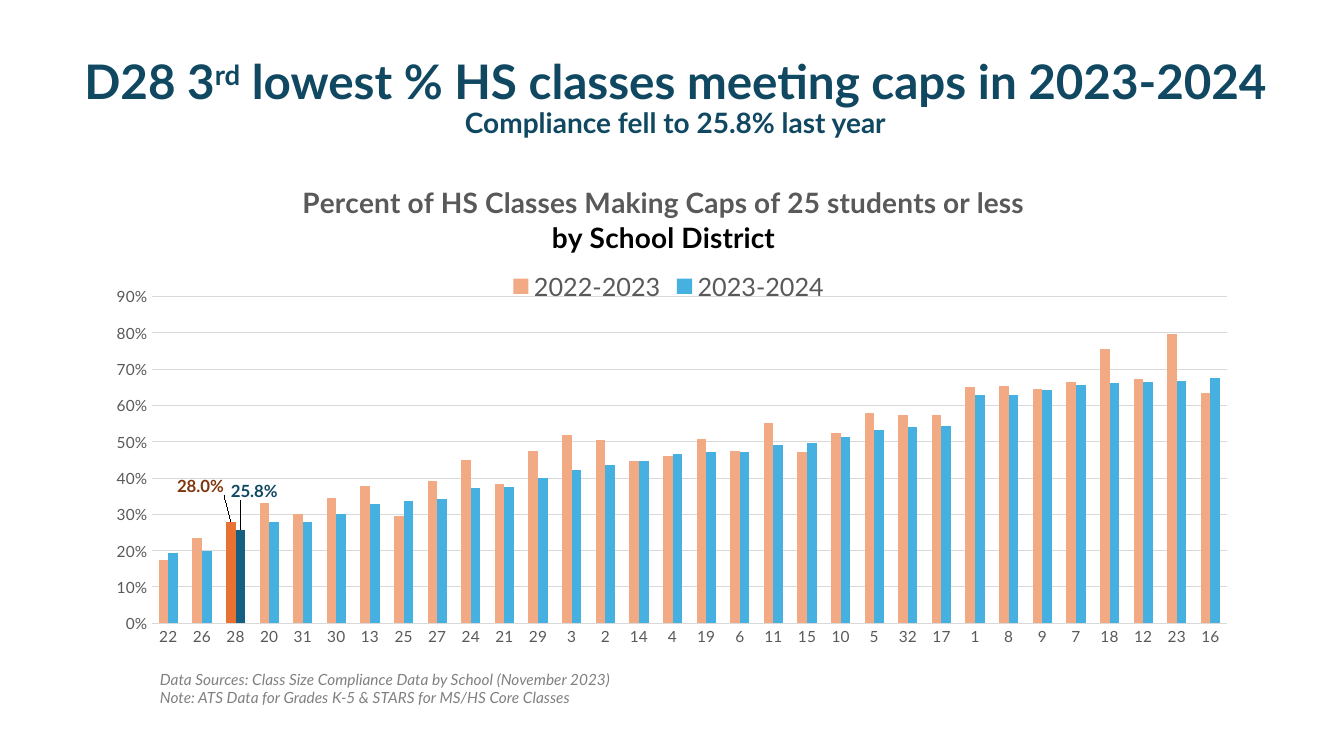
"""Build the slide on high school class size compliance by district."""
from dataclasses import dataclass

from lxml import etree
from pptx import Presentation
from pptx import util as u
from pptx.chart import data as chart_data
from pptx.dml import color
from pptx.enum import chart as ec, text
from pptx.oxml import ns


@dataclass(frozen=True)
class Theme:
    face: str = "Lato"
    navy: str = "104862"
    rust: str = "80350E"
    grey: str = "595959"
    black: str = "000000"
    note: str = "808080"
    rule: str = "D9D9D9"
    headline: int = 34
    heading: int = 20
    legend: int = 18
    label: int = 12
    small: int = 11


THEME = Theme()
DISTRICTS = ("22 26 28 20 31 30 13 25 27 24 21 29 3 2 14 4 19 6 11 15 10 5 32 17 "
             "1 8 9 7 18 12 23 16").split()
HIGHLIGHT = DISTRICTS.index("28")
YEARS = [
    dict(name="2022-2023", fill="F2AA84", accent="E97132", label=THEME.rust, shift=(-0.026, -0.04),
         rates=[0.174, 0.236, 0.280, 0.330, 0.300, 0.345, 0.378, 0.296,
                0.393, 0.450, 0.385, 0.474, 0.519, 0.505, 0.446, 0.461,
                0.508, 0.474, 0.553, 0.472, 0.525, 0.579, 0.574, 0.573,
                0.652, 0.653, 0.645, 0.664, 0.755, 0.672, 0.796, 0.634]),
    dict(name="2023-2024", fill="46B1E1", accent="156082", label=THEME.navy, shift=(0.012, -0.045),
         rates=[0.194, 0.198, 0.258, 0.278, 0.280, 0.300, 0.329, 0.336,
                0.343, 0.372, 0.376, 0.400, 0.423, 0.435, 0.448, 0.467,
                0.471, 0.473, 0.491, 0.498, 0.513, 0.532, 0.542, 0.543,
                0.628, 0.630, 0.642, 0.657, 0.661, 0.664, 0.668, 0.676]),
]


def assign(target, **values):
    """Set each given value as an attribute of the target."""
    for name, value in values.items():
        setattr(target, name, value)


def style(font, size, tint, **values):
    """Give a font the theme face, a size and a colour."""
    assign(font, name=THEME.face, size=u.Pt(size), **values)
    font.color.rgb = color.RGBColor.from_string(tint)


def paint(fill, tint):
    """Make a fill solid in one colour."""
    fill.solid()
    fill.fore_color.rgb = color.RGBColor.from_string(tint)


def layout(x, y, width=None, height=None):
    """Return a manual chart layout, in fractions of the chart."""
    root = etree.Element(ns.qn("c:layout"))
    manual = etree.SubElement(root, ns.qn("c:manualLayout"))
    edges = {"xMode": "edge", "yMode": "edge"}
    parts = {"x": x, "y": y}
    if width:
        parts = {"layoutTarget": "inner", **edges, **parts, "w": width, "h": height}
    elif x > 0.1:
        parts = {**edges, **parts}
    for name, value in parts.items():
        etree.SubElement(manual, ns.qn("c:" + name)).set("val", str(value))
    return root


def place(parent, new, before):
    """Put a layout before the first of the named children, replacing any old one."""
    for old in parent.findall(ns.qn("c:layout")):
        parent.remove(old)
    for name in before:
        follower = parent.find(ns.qn("c:" + name))
        if follower is not None:
            follower.addprevious(new)
            return
    parent.append(new)


def add_lines(frame, lines, **paragraph_format):
    """Write paragraphs, each a list of (words, size, tint, font values, baseline)."""
    for index, runs in enumerate(lines):
        line = frame.add_paragraph() if index else frame.paragraphs[0]
        assign(line, **paragraph_format)
        for words, size, tint, values, baseline in runs:
            run = line.add_run()
            run.text = words
            style(run.font, size, tint, **values)
            if baseline:
                run.font._element.set("baseline", str(baseline))


def add_text(slide, box, lines, anchor, **paragraph_format):
    """Add a wrapped text box."""
    frame = slide.shapes.add_textbox(*map(u.Cm, box)).text_frame
    assign(frame, word_wrap=True, vertical_anchor=anchor)
    add_lines(frame, lines, **paragraph_format)


def label_highlight(series, year):
    """Colour the highlighted column and label it with a leader line."""
    point = series.points[HIGHLIGHT]
    paint(point.format.fill, year["accent"])
    label = point.data_label
    style(label.font, THEME.label, year["label"], bold=True)
    label.position = ec.XL_LABEL_POSITION.OUTSIDE_END
    series.data_labels.show_value = False
    group = series.data_labels._element
    item = group.find(ns.qn("c:dLbl"))
    place(item, layout(*year["shift"]), ["spPr", "txPr"])
    number = etree.Element(ns.qn("c:numFmt"), formatCode="0.0%", sourceLinked="0")
    item.find(ns.qn("c:layout")).addnext(number)
    leader = group.find(ns.qn("c:showLeaderLines"))
    if leader is None:
        leader = etree.SubElement(group, ns.qn("c:showLeaderLines"))
    leader.set("val", "1")


def style_axes(chart):
    """Format the district axis and the percentage axis."""
    for axis in (chart.category_axis, chart.value_axis):
        assign(axis, major_tick_mark=ec.XL_TICK_MARK.NONE, minor_tick_mark=ec.XL_TICK_MARK.NONE)
        style(axis.tick_labels.font, THEME.small, THEME.grey)
    percent = chart.value_axis
    assign(percent, minimum_scale=0, maximum_scale=0.9, major_unit=0.1, has_major_gridlines=True)
    assign(percent.tick_labels, number_format="0%", number_format_is_linked=False)
    percent.format.line.fill.background()
    for rule in (chart.category_axis.format.line, percent.major_gridlines.format.line):
        paint(rule.fill, THEME.rule)
        rule.width = u.Pt(0.75)


def add_compliance_chart(slide, box):
    """Add the clustered columns of both years by district."""
    table = chart_data.CategoryChartData(number_format="0.0%")
    table.categories = DISTRICTS
    for year in YEARS:
        table.add_series(year["name"], year["rates"])
    chart = slide.shapes.add_chart(
        ec.XL_CHART_TYPE.COLUMN_CLUSTERED, *map(u.Cm, box), table).chart
    style(chart.font, 10, THEME.black)
    assign(chart, has_title=True, has_legend=True)
    bold = {"bold": True}
    add_lines(chart.chart_title.text_frame, [
        [("Percent of HS Classes Making Caps of 25 students or less",
          THEME.heading, THEME.grey, bold, 0)],
        [("by School District", THEME.heading, THEME.black, bold, 0)],
    ], alignment=text.PP_ALIGN.CENTER)
    assign(chart.legend, position=ec.XL_LEGEND_POSITION.TOP, include_in_layout=False)
    style(chart.legend.font, THEME.legend, THEME.grey)
    columns = chart.plots[0]
    assign(columns, gap_width=150, overlap=0, vary_by_categories=False)
    for series, year in zip(columns.series, YEARS):
        paint(series.format.fill, year["fill"])
        label_highlight(series, year)
    style_axes(chart)
    place(chart.chart_title._element, layout(0.188, 0.041), ["overlay"])
    place(chart.legend._element, layout(0.365, 0.195), ["overlay"])
    area = columns._element.getparent()
    place(area, layout(0.061, 0.25, 0.925, 0.585), ["barChart"])


def main():
    """Assemble and save the slide."""
    deck = Presentation()
    assign(deck, slide_width=u.Cm(33.87), slide_height=u.Cm(19.05))
    slide = deck.slides.add_slide(deck.slide_layouts[6])
    add_compliance_chart(slide, (2.03, 3.96, 29.31, 14.07))
    bold, italic = {"bold": True}, {"italic": True}
    add_text(slide, (0.97, 1.02, 32.11, 2.95), [
        [("D28 3", THEME.headline, THEME.navy, bold, 0),
         ("rd", THEME.headline, THEME.navy, bold, 30000),
         (" lowest % HS classes meeting caps in 2023-2024", THEME.headline, THEME.navy, bold, 0)],
        [("Compliance fell to 25.8% last year", THEME.heading, THEME.navy, bold, 0)],
    ], text.MSO_ANCHOR.MIDDLE, alignment=text.PP_ALIGN.CENTER, line_spacing=0.9)
    add_text(slide, (3.78, 16.76, 13.41, 1.27), [
        [(words, THEME.small, THEME.note, italic, 0)] for words in (
            "Data Sources: Class Size Compliance Data by School (November 2023)",
            "Note: ATS Data for Grades K-5 & STARS for MS/HS Core Classes")
    ], text.MSO_ANCHOR.TOP)
    deck.save("out.pptx")


if __name__ == "__main__":
    main()
